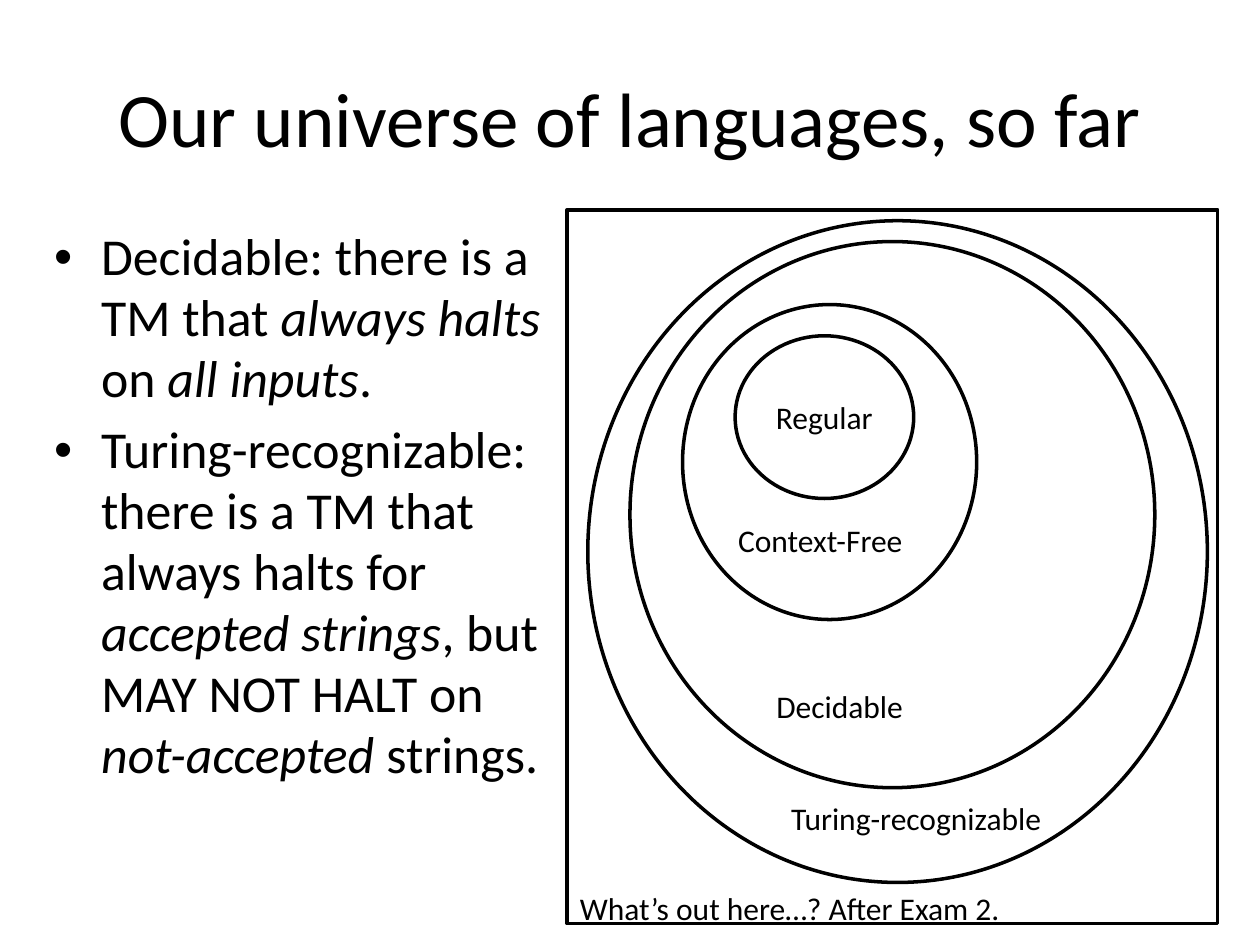
from typing import NamedTuple

from lxml import etree
from pptx import Presentation
from pptx.dml.color import RGBColor
from pptx.enum.shapes import MSO_SHAPE
from pptx.enum.text import MSO_ANCHOR, PP_ALIGN
from pptx.oxml.ns import qn
from pptx.util import Cm, Pt

BLACK = RGBColor(0, 0, 0)
WHITE = RGBColor(255, 255, 255)
OVAL, RECTANGLE = MSO_SHAPE.OVAL, MSO_SHAPE.RECTANGLE
MIDDLE, TOP = MSO_ANCHOR.MIDDLE, MSO_ANCHOR.TOP
CENTER, LEFT = PP_ALIGN.CENTER, PP_ALIGN.LEFT
FONT = "Calibri"
LABEL_SIZE = 18
BODY_SIZE = 29.6
INDENT = Cm(0.95)
NO_MARGINS = dict.fromkeys(
    ("margin_left", "margin_right", "margin_top", "margin_bottom"), 0
)


class Frame(NamedTuple):
    left: float
    top: float
    width: float
    height: float

    def lengths(self) -> list:
        return [Cm(value) for value in self]


class Region(NamedTuple):
    frame: Frame
    kind: int = OVAL
    text: str = ""


class Label(NamedTuple):
    text: str
    frame: Frame


class Span(NamedTuple):
    text: str
    italic: bool = False


REGIONS = [
    Region(Frame(14.82, 6.77, 3.6, 3.28), text="Regular"),
    Region(Frame(13.76, 6.14, 5.93, 6.35)),
    Region(Frame(11.43, 4.23, 13.12, 14.39), RECTANGLE),
    Region(Frame(12.7, 4.87, 10.58, 11.01)),
    Region(Frame(11.85, 4.45, 12.49, 13.34)),
]
LABELS = [
    Label("Context-Free", Frame(14.88, 10.51, 3.8, 0.77)),
    Label("Decidable", Frame(15.65, 13.84, 3.4, 0.77)),
    Label("Turing-recognizable", Frame(15.95, 16.1, 5.8, 0.77)),
    Label("What’s out here…? After Exam 2.", Frame(11.69, 17.93, 10, 0.77)),
]
DEFINITIONS = [
    [
        Span("Decidable: there is a TM that "),
        Span("always halts", True),
        Span(" on "),
        Span("all inputs", True),
        Span("."),
    ],
    [
        Span("Turing-recognizable: there is a TM that always halts for "),
        Span("accepted strings", True),
        Span(", but MAY NOT HALT on "),
        Span("not-accepted ", True),
        Span("strings."),
    ],
]


def apply(target, values: dict) -> None:
    for name, value in values.items():
        setattr(target, name, value)


def add_span(para, span: Span, size: float) -> None:
    run = para.add_run()
    run.text = span.text
    apply(run.font, {"name": FONT, "size": Pt(size), "italic": span.italic})
    run.font.color.rgb = BLACK


def write(box, text: str, size: float, align=LEFT, anchor=MIDDLE, margins=None) -> None:
    frame = box.text_frame
    apply(frame, {"word_wrap": True, "vertical_anchor": anchor, **(margins or {})})
    para = frame.paragraphs[0]
    para.alignment = align
    add_span(para, Span(text), size)


def add_region(page, region: Region) -> None:
    shape = page.shapes.add_shape(region.kind, *region.frame.lengths())
    shape.shadow.inherit = False
    shape.line.color.rgb = BLACK
    shape.line.width = Pt(2)
    if region.text:
        shape.fill.solid()
        shape.fill.fore_color.rgb = WHITE
        write(shape, region.text, LABEL_SIZE, CENTER, margins=NO_MARGINS)
    else:
        shape.fill.background()


def add_label(page, label: Label) -> None:
    box = page.shapes.add_textbox(*label.frame.lengths())
    write(box, label.text, LABEL_SIZE, anchor=TOP, margins=NO_MARGINS)


def add_bullet(para) -> None:
    properties = para._p.get_or_add_pPr()
    properties.set("marL", str(INDENT))
    properties.set("indent", str(-INDENT))
    etree.SubElement(properties, qn("a:buFont"), typeface="Arial")
    etree.SubElement(properties, qn("a:buChar"), char="•")


def add_definitions(page, definitions: list[list[Span]]) -> None:
    box = page.shapes.add_textbox(*Frame(0.84, 4.45, 10.59, 12.57).lengths())
    frame = box.text_frame
    frame.word_wrap = True
    for index, spans in enumerate(definitions):
        para = frame.add_paragraph() if index else frame.paragraphs[0]
        apply(para, {"space_before": Pt(6), "line_spacing": 0.98})
        add_bullet(para)
        for span in spans:
            add_span(para, span, BODY_SIZE)


def main() -> None:
    deck = Presentation()
    apply(deck, {"slide_width": Cm(25.4), "slide_height": Cm(19.05)})
    page = deck.slides.add_slide(deck.slide_layouts[6])
    title = page.shapes.add_textbox(*Frame(1.27, 0.76, 22.86, 3.18).lengths())
    write(title, "Our universe of languages, so far", 44, CENTER)
    add_definitions(page, DEFINITIONS)
    for region in REGIONS:
        add_region(page, region)
    for label in LABELS:
        add_label(page, label)
    deck.save("out.pptx")


if __name__ == "__main__":
    main()
